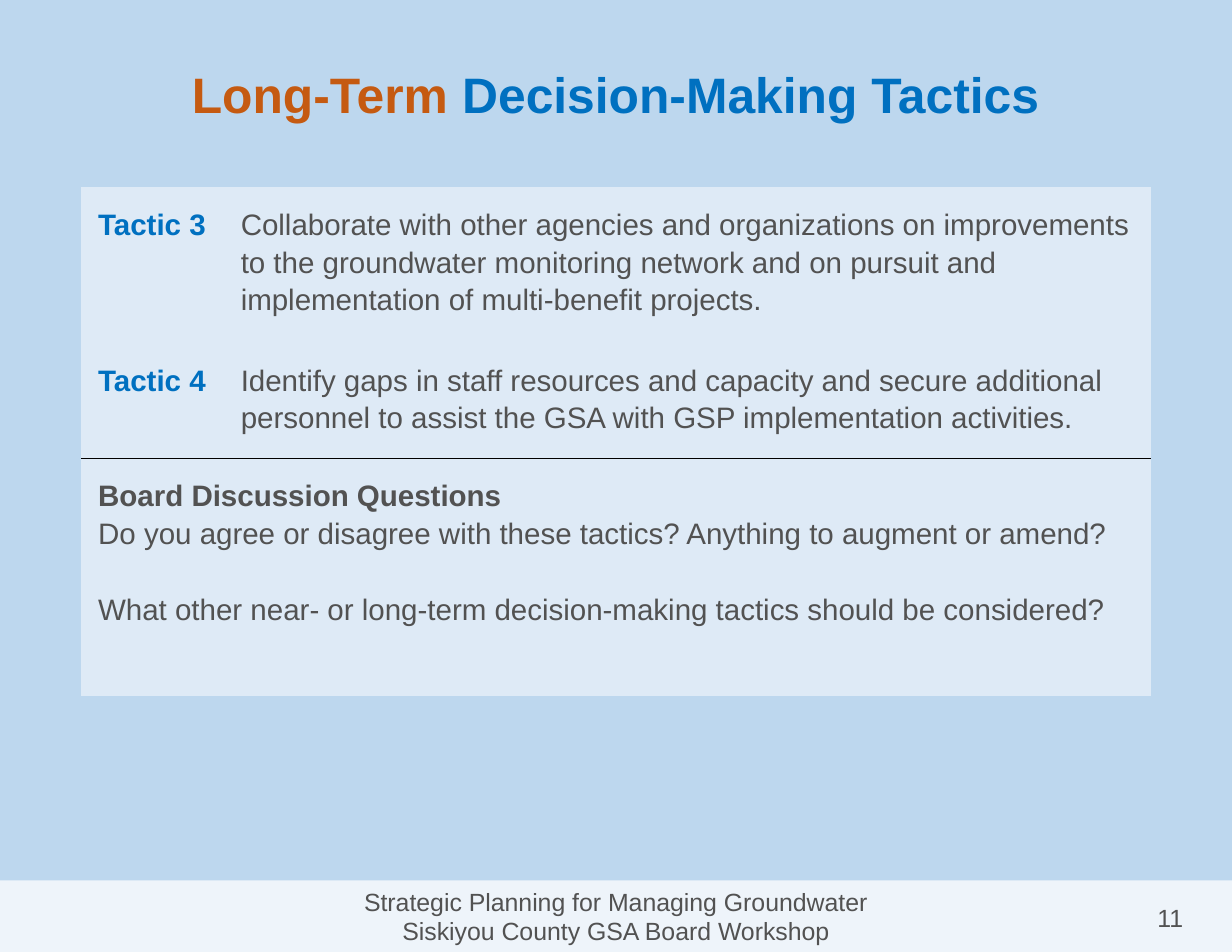
import pptx
import pptx.dml.color
import pptx.enum.shapes
import pptx.enum.text
import pptx.oxml
import pptx.oxml.ns
import pptx.util
from pptx.util import Pt

ORANGE, BLUE, GRAY = "C55A11", "0070C0", "525252"
PANEL, SKY, WHITE, BLACK = "DEEAF6", "BDD7EE", "FFFFFF", "000000"
CENTER = pptx.enum.text.PP_ALIGN.CENTER
MIDDLE = pptx.enum.text.MSO_ANCHOR.MIDDLE
TACTICS = [
    ("Tactic 3", "Collaborate with other agencies and organizations on improvements "
     "to the groundwater monitoring network and on pursuit and "
     "implementation of multi-benefit projects."),
    ("Tactic 4", "Identify gaps in staff resources and capacity and secure additional "
     "personnel to assist the GSA with GSP implementation activities."),
]
QUESTIONS = [
    "Do you agree or disagree with these tactics? Anything to augment or amend?",
    "What other near- or long-term decision-making tactics should be considered?",
]


def color(value):
    return pptx.dml.color.RGBColor.from_string(value)


def style(font, size, value, bold=False):
    font.name, font.size, font.bold = "Arial", Pt(size), bold
    font.color.rgb = color(value)


def add_paragraph(frame, text, size, value, bold=False):
    """Fill the frame's first paragraph if it is empty, otherwise append one."""
    para = frame.paragraphs[-1]
    if para.runs:
        para = frame.add_paragraph()
    para.add_run().text = text
    style(para.font, size, value, bold)
    return para


def add_text_box(page, box):
    frame = page.shapes.add_textbox(*map(Pt, box)).text_frame
    frame.word_wrap = True
    frame.vertical_anchor = MIDDLE
    return frame


def add_title(page, box):
    para = add_text_box(page, box).paragraphs[0]
    para.alignment = CENTER
    for text, value in (("Long-Term", ORANGE), (" Decision-Making Tactics", BLUE)):
        span = para.add_run()
        span.text = text
        style(span.font, 32, value, True)


def add_footer(page, box):
    left, top, width, height = box
    band = page.shapes.add_shape(
        pptx.enum.shapes.MSO_SHAPE.RECTANGLE, *map(Pt, box))
    band.shadow.inherit = False
    band.line.fill.background()
    band.fill.solid()
    band.fill.fore_color.rgb = color(WHITE)
    fill_color = band.fill._xPr.find(".//" + pptx.oxml.ns.qn("a:srgbClr"))
    fill_color.append(pptx.oxml.parse_xml(
        f'<a:alpha {pptx.oxml.ns.nsdecls("a")} val="75000"/>'))
    band.text_frame.vertical_anchor = MIDDLE
    for text in ("Strategic Planning for Managing Groundwater",
                 "Siskiyou County GSA Board Workshop"):
        add_paragraph(band.text_frame, text, 16, GRAY).alignment = CENTER
    number = add_text_box(page, (left + width - 64.8, top + 10.8, 50.4, 26.6))
    add_paragraph(number, "11", 16, GRAY).alignment = CENTER


def format_cell(cell, ruled_side):
    """Fill the cell and leave it without borders, except on the ruled side."""
    properties = cell._tc.get_or_add_tcPr()
    for side in "LRTB":
        paint = "<a:noFill/>"
        if side == ruled_side:
            paint = f'<a:solidFill><a:srgbClr val="{BLACK}"/></a:solidFill>'
        properties.append(pptx.oxml.parse_xml(
            f'<a:ln{side} {pptx.oxml.ns.nsdecls("a")} w="12700">{paint}</a:ln{side}>'))
    cell.fill.solid()
    cell.fill.fore_color.rgb = color(PANEL)
    cell.margin_left = cell.margin_right = Pt(10.8)
    cell.margin_top = cell.margin_bottom = Pt(10.8)


def add_cell_text(cell, text, value=GRAY, bold=False):
    para = add_paragraph(cell.text_frame, text, 19, value, bold)
    para.line_spacing = 1.15
    return para


def add_tactics_table(page, box):
    table = page.shapes.add_table(3, 2, *map(Pt, box)).table
    table.first_row = table.horz_banding = False
    label_width = 91.7
    for column, width in zip(table.columns, (label_width, box[2] - label_width)):
        column.width = Pt(width)
    for row, height, ruled_side in zip(table.rows, (99.6, 74.3, 152.8), ("", "B", "T")):
        row.height = Pt(height)
        for cell in row.cells:
            format_cell(cell, ruled_side)
    for index, (label, text) in enumerate(TACTICS):
        add_cell_text(table.cell(index, 0), label, BLUE, True)
        add_cell_text(table.cell(index, 1), text)
    discussion = table.cell(2, 0)
    discussion.merge(table.cell(2, 1))
    add_cell_text(discussion, "Board Discussion Questions", bold=True)
    for question in QUESTIONS:
        para = add_cell_text(discussion, question)
    para.space_before = Pt(24.3)


def main():
    deck = pptx.Presentation()
    deck.slide_width, deck.slide_height = Pt(792), Pt(612)
    page = deck.slides.add_slide(deck.slide_layouts[6])
    page.background.fill.solid()
    page.background.fill.fore_color.rgb = color(SKY)
    add_title(page, (39.6, 24.5, 712.8, 71.3))
    add_footer(page, (0, 565.9, 792, 46.1))
    add_tactics_table(page, (52.3, 120.2, 687.6, 326.7))
    deck.save("out.pptx")


if __name__ == "__main__":
    main()
